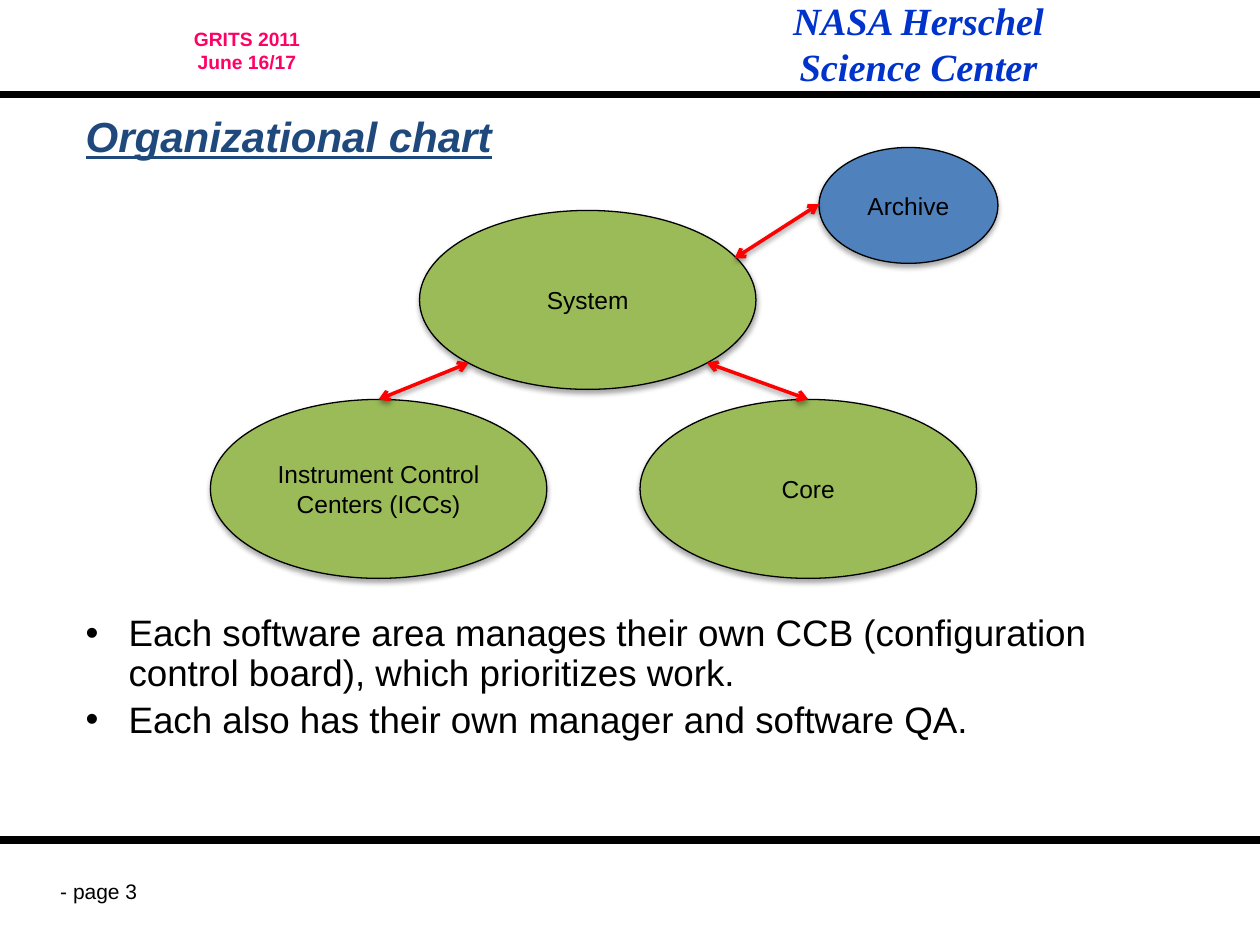
from lxml.etree import SubElement
from pptx import Presentation
from pptx.dml.color import RGBColor
from pptx.enum.shapes import MSO_CONNECTOR, MSO_SHAPE
from pptx.enum.text import MSO_ANCHOR, MSO_AUTO_SIZE, PP_ALIGN
from pptx.oxml.ns import qn
from pptx.util import Inches, Pt

THEME = {
    "black": "000000", "white": "FFFFFF", "red": "FF0000",
    "green": "9BBB59", "blue": "4F81BD",
    "shape_shadow": (35, 3.1, 1.8), "arrow_shadow": (38, 3.1, 1.6),
    "title": {"size": 24, "color": "1F497D", "bold": True, "italic": True, "underline": True},
    "body": {"size": 21},
    "node": {"size": 14},
    "page": {"size": 12},
    "event": {"size": 11, "color": "FF0066", "bold": True},
    "center": {"size": 22, "color": "0033CC", "bold": True, "italic": True,
               "name": "Times New Roman"},
}

TITLE = "Organizational chart"
BULLETS = [
    "Each software area manages their own CCB (configuration control board), which prioritizes work.",
    "Each also has their own manager and software QA.",
]
FRAME_TEXTS = [
    (["- page 3"], (0.38, 6.92, 1, 0.35), "page", PP_ALIGN.LEFT),
    (["GRITS 2011", "June 16/17"], (-0.08, 0.17, 4.08, 0.5), "event", PP_ALIGN.CENTER),
    (["NASA Herschel", "Science Center"], (4.58, -0.07, 5.42, 0.84), "center", PP_ALIGN.CENTER),
]
RULE_TOPS = [0.75, 6.67]
AREA_SIZE = (2.67, 1.42)
NODES = {
    "Instrument Control Centers (ICCs)": ((1.67, 3.17), AREA_SIZE, "green"),
    "Core": ((5.08, 3.17), AREA_SIZE, "green"),
    "System": ((3.33, 1.67), AREA_SIZE, "green"),
    "Archive": ((6.5, 1.17), (1.42, 0.92), "blue"),
}
LINKS = [
    ((3.72, 2.88), "Instrument Control Centers (ICCs)"),
    ((5.61, 2.88), "Core"),
]
ARCHIVE_LINK = ((5.83, 2.05), (6.5, 1.62))


def color(name):
    return RGBColor.from_string(THEME.get(name, name))


def box(values):
    return [Inches(value) for value in values]


def style_paragraph(paragraph, style, alignment=PP_ALIGN.LEFT):
    paragraph.alignment = alignment
    font = paragraph.font
    font.name = style.get("name", "Arial")
    font.size = Pt(style["size"])
    font.color.rgb = color(style.get("color", "black"))
    font.bold = style.get("bold", False)
    font.italic = style.get("italic", False)
    font.underline = style.get("underline", False)


def write(shape, lines, style, alignment, anchor=MSO_ANCHOR.TOP):
    frame = shape.text_frame
    frame.text = "\n".join(lines)
    frame.word_wrap = True
    frame.auto_size = MSO_AUTO_SIZE.NONE
    frame.vertical_anchor = anchor
    for paragraph in frame.paragraphs:
        style_paragraph(paragraph, THEME[style], alignment)


def place(shape, bounds):
    shape.left, shape.top, shape.width, shape.height = box(bounds)


def add_shadow(effects, values):
    opacity, blur, distance = values
    shadow = SubElement(effects, qn("a:outerShdw"), blurRad=str(Pt(blur)),
                        dist=str(Pt(distance)), dir="5400000", rotWithShape="0")
    shade = SubElement(shadow, qn("a:srgbClr"), val=THEME["black"])
    SubElement(shade, qn("a:alpha"), val=str(opacity * 1000))


def add_line(slide, start, end, line_color, width):
    connector = slide.shapes.add_connector(MSO_CONNECTOR.STRAIGHT, *box(start + end))
    connector.line.color.rgb = color(line_color)
    connector.line.width = Pt(width)
    effects = SubElement(connector._element.spPr, qn("a:effectLst"))
    return connector, effects


def add_arrow(slide, start, end):
    connector, effects = add_line(slide, start, end, "red", 2)
    add_shadow(effects, THEME["arrow_shadow"])
    for tag in ("a:headEnd", "a:tailEnd"):
        SubElement(connector.line._get_or_add_ln(), qn(tag), type="arrow")
    return connector


def add_node(slide, label, position, size, fill):
    ellipse = slide.shapes.add_shape(MSO_SHAPE.OVAL, *box(position + size))
    ellipse.fill.solid()
    ellipse.fill.fore_color.rgb = color(fill)
    ellipse.line.color.rgb = color("black")
    ellipse.line.width = Pt(0.75)
    ellipse.shadow.inherit = False
    add_shadow(ellipse._element.spPr.find(qn("a:effectLst")), THEME["shape_shadow"])
    write(ellipse, [label], "node", PP_ALIGN.CENTER, MSO_ANCHOR.MIDDLE)
    return ellipse


def add_frame(slide):
    for lines, bounds, style, alignment in FRAME_TEXTS:
        write(slide.shapes.add_textbox(*box(bounds)), lines, style, alignment)
    for top in RULE_TOPS:
        add_line(slide, (0, top), (10, top), "black", 4.5)


def fill_placeholders(slide):
    title, body = slide.shapes.title, slide.placeholders[1]
    place(title, (0.58, 0.83, 8.25, 0.67))
    write(title, [TITLE], "title", PP_ALIGN.LEFT)

    place(body, (0.58, 4.83, 9, 1.5))
    body.text_frame.text = "\n".join(BULLETS)
    body.text_frame.auto_size = MSO_AUTO_SIZE.NONE
    for index, paragraph in enumerate(body.text_frame.paragraphs):
        properties = paragraph._p.get_or_add_pPr()
        properties.set("marL", str(Inches(0.34)))
        properties.set("indent", str(-Inches(0.34)))
        SubElement(properties, qn("a:buFont"), typeface="Arial")
        SubElement(properties, qn("a:buChar"), char="•")
        paragraph.line_spacing = 0.9
        paragraph.space_before = Pt(4.2 if index else 0)
        style_paragraph(paragraph, THEME["body"])


def add_chart_of_areas(slide):
    nodes = {label: add_node(slide, label, *values) for label, values in NODES.items()}
    for start, label in LINKS:
        (left, top), (width, _), _ = NODES[label]
        arrow = add_arrow(slide, start, (left + width / 2, top))
        arrow.end_connect(nodes[label], 0)
    add_arrow(slide, *ARCHIVE_LINK)


def main():
    presentation = Presentation()
    presentation.slide_width, presentation.slide_height = Inches(10), Inches(7.5)
    slide = presentation.slides.add_slide(presentation.slide_layouts[1])
    slide.background.fill.solid()
    slide.background.fill.fore_color.rgb = color("white")
    add_frame(slide)
    fill_placeholders(slide)
    add_chart_of_areas(slide)
    presentation.save("out.pptx")


if __name__ == "__main__":
    main()
